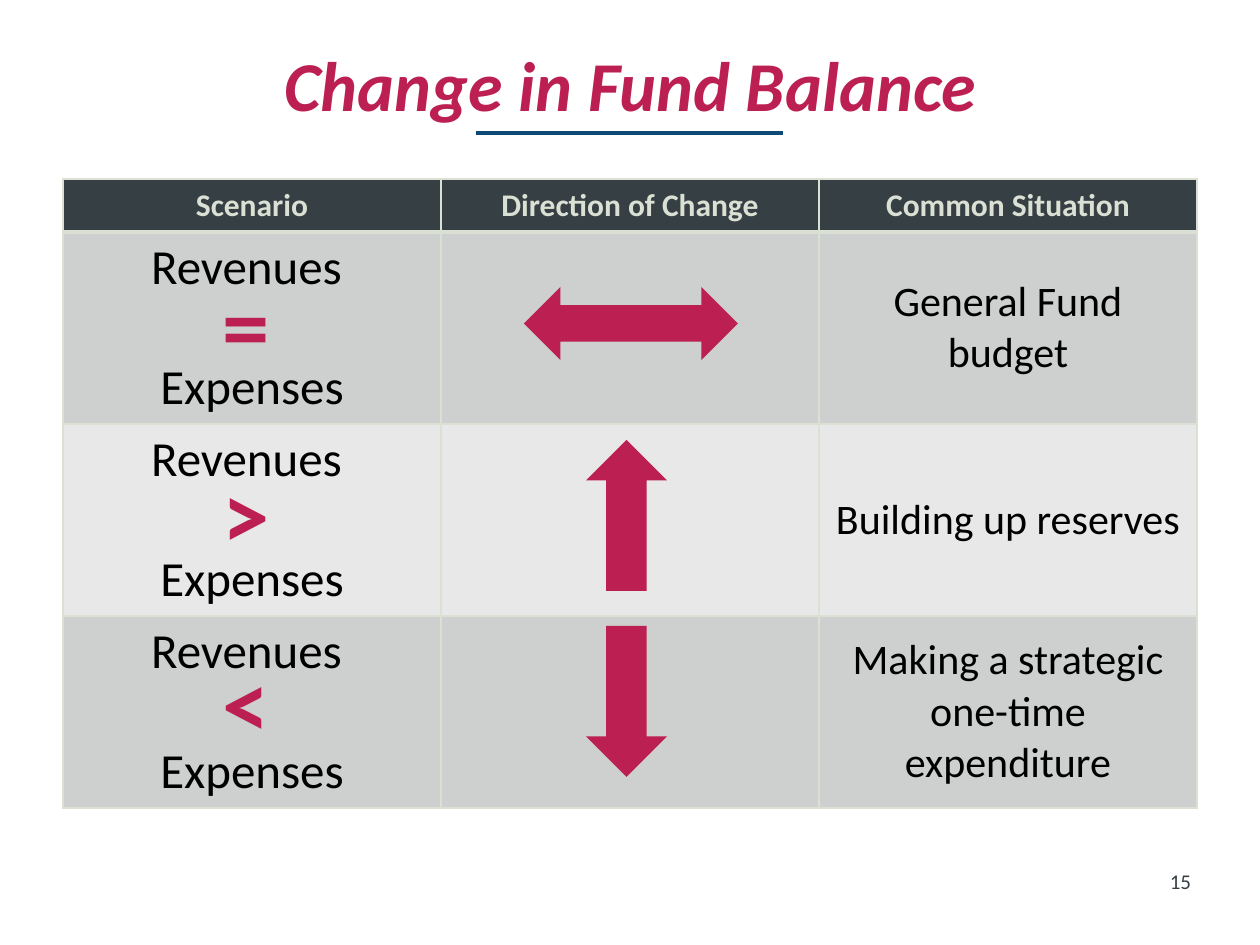
from dataclasses import dataclass

from lxml.etree import SubElement
from pptx import Presentation
from pptx.dml.color import RGBColor
from pptx.enum.shapes import MSO_CONNECTOR, MSO_SHAPE
from pptx.enum.text import MSO_ANCHOR, PP_ALIGN
from pptx.oxml import parse_xml
from pptx.oxml.ns import nsdecls, qn
from pptx.util import Pt

TITLE = "Change in Fund Balance"
PAGE = "15"
HEADINGS = ("Scenario", "Direction of Change", "Common Situation")
SCENARIOS = [
    dict(sign="=", sign_top=260, situation="General Fund budget",
         arrow=MSO_SHAPE.LEFT_RIGHT_ARROW, arrow_box=(524, 287, 214, 73)),
    dict(sign=">", sign_top=449, situation="Building up reserves",
         arrow=MSO_SHAPE.UP_ARROW, arrow_box=(586, 440, 81, 151)),
    dict(sign="<", sign_top=638, situation="Making a strategic one-time expenditure",
         arrow=MSO_SHAPE.DOWN_ARROW, arrow_box=(586, 626, 81, 151)),
]
COMPARED = ("Revenues ", "Expenses")

TITLE_BOX = (63, 33, 1134, 102)
RULE = (476, 133, 783, 133)
TABLE_LEFT, TABLE_TOP, COLUMN = 63, 179, 378
HEADER_HEIGHT, ROW_HEIGHT = 53, 192
SIGN_LEFT, SIGN_WIDTH, SIGN_HEIGHT = 190, 112, 127
PAGE_BOX = (1134, 869, 57, 28)


@dataclass(frozen=True)
class Theme:
    face: str = "Calibri"
    accent: str = "BC1F52"
    rule: str = "0E4875"
    dark: str = "364044"
    pale: str = "DAE1D4"
    ink: str = "000000"
    bands: tuple = ("CECFCF", "E8E8E9")
    title: int = 40
    heading: int = 18
    compared: int = 28
    situation: int = 24
    sign: int = 54
    page: int = 12
    sign_gap: int = 34


THEME = Theme()


def px(*lengths):
    return [round(length * 914400 / 126) for length in lengths]


def write(paragraph, text, size, color, bold=False, italic=False, align=PP_ALIGN.CENTER):
    paragraph.text = text
    paragraph.alignment = align
    font = paragraph.font
    font.name, font.size = THEME.face, Pt(size)
    font.bold, font.italic = bold, italic
    font.color.rgb = RGBColor.from_string(color)


def paint(cell, color, top=1, bottom=1):
    cell.fill.solid()
    cell.fill.fore_color.rgb = RGBColor.from_string(color)
    cell.vertical_anchor = MSO_ANCHOR.MIDDLE
    properties = cell._tc.get_or_add_tcPr()
    for index, (side, width) in enumerate(zip("LRTB", (1, 1, top, bottom))):
        properties.insert(index, parse_xml(
            f'<a:ln{side} {nsdecls("a")} w="{Pt(width)}"><a:solidFill>'
            f'<a:srgbClr val="{THEME.pale}"/></a:solidFill></a:ln{side}>'))


def add_label(slide, box, text, size, color, **style):
    label = slide.shapes.add_textbox(*px(*box))
    label.text_frame.word_wrap = True
    write(label.text_frame.paragraphs[0], text, size, color, **style)
    return label.text_frame


def add_heading(slide):
    title = slide.shapes.title
    title.left, title.top, title.width, title.height = px(*TITLE_BOX)
    title.text_frame.vertical_anchor = MSO_ANCHOR.MIDDLE
    write(title.text_frame.paragraphs[0], TITLE, THEME.title, THEME.accent,
          bold=True, italic=True)
    rule = slide.shapes.add_connector(MSO_CONNECTOR.STRAIGHT, *px(*RULE))
    rule.line.color.rgb = RGBColor.from_string(THEME.rule)
    rule.line.width = Pt(2)
    SubElement(rule._element.spPr, qn("a:effectLst"))


def add_scenarios(slide):
    count = len(SCENARIOS)
    table = slide.shapes.add_table(
        count + 1, len(HEADINGS),
        *px(TABLE_LEFT, TABLE_TOP, COLUMN * len(HEADINGS),
            HEADER_HEIGHT + ROW_HEIGHT * count)).table
    for column, heading in enumerate(HEADINGS):
        table.columns[column].width = px(COLUMN)[0]
        cell = table.cell(0, column)
        paint(cell, THEME.dark, bottom=3)
        write(cell.text_frame.paragraphs[0], heading, THEME.heading, THEME.pale, bold=True)
    table.rows[0].height = px(HEADER_HEIGHT)[0]

    for row, scenario in enumerate(SCENARIOS, 1):
        table.rows[row].height = px(ROW_HEIGHT)[0]
        cells = [table.cell(row, column) for column in range(len(HEADINGS))]
        for cell in cells:
            paint(cell, THEME.bands[(row - 1) % 2], top=3 if row == 1 else 1)
        compared, _, situation = [cell.text_frame for cell in cells]
        revenues, expenses = compared.paragraphs[0], compared.add_paragraph()
        for paragraph, word in zip((revenues, expenses), COMPARED):
            write(paragraph, word, THEME.compared, THEME.ink)
        expenses.space_before = Pt(THEME.sign_gap)
        write(situation.paragraphs[0], scenario["situation"], THEME.situation, THEME.ink)

        arrow = slide.shapes.add_shape(scenario["arrow"], *px(*scenario["arrow_box"]))
        arrow.shadow.inherit = False
        arrow.fill.solid()
        arrow.fill.fore_color.rgb = RGBColor.from_string(THEME.accent)
        arrow.line.fill.background()
        add_label(slide, (SIGN_LEFT, scenario["sign_top"], SIGN_WIDTH, SIGN_HEIGHT),
                  scenario["sign"], THEME.sign, THEME.accent, bold=True)


def add_page_number(slide):
    frame = add_label(slide, PAGE_BOX, PAGE, THEME.page, THEME.dark, align=PP_ALIGN.RIGHT)
    frame.margin_left = frame.margin_right = frame.margin_top = frame.margin_bottom = 0


def main():
    deck = Presentation()
    deck.slide_width, deck.slide_height = px(1260, 945)
    slide = deck.slides.add_slide(deck.slide_layouts.get_by_name("Title Only"))
    add_heading(slide)
    add_scenarios(slide)
    add_page_number(slide)
    deck.save("out.pptx")


if __name__ == "__main__":
    main()
